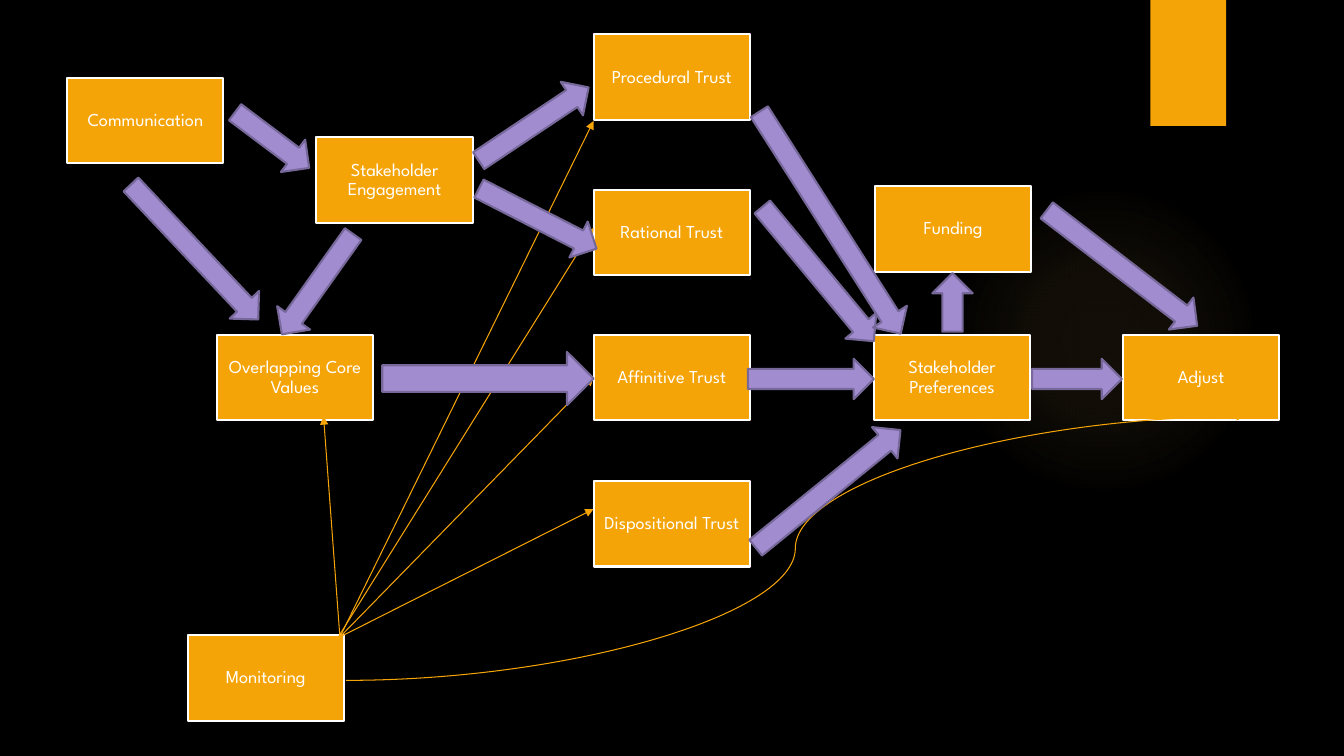
from lxml import etree
from pptx import Presentation
from pptx.dml.color import RGBColor
from pptx.enum.shapes import MSO_CONNECTOR, MSO_SHAPE
from pptx.enum.text import MSO_ANCHOR, PP_ALIGN
from pptx.oxml import parse_xml
from pptx.oxml.ns import qn
from pptx.util import Pt

RECT, OVAL, ARROW = MSO_SHAPE.RECTANGLE, MSO_SHAPE.OVAL, MSO_SHAPE.RIGHT_ARROW
LINE, CURVE = MSO_CONNECTOR.STRAIGHT, MSO_CONNECTOR.CURVE
MIDDLE, CENTER = MSO_ANCHOR.MIDDLE, PP_ALIGN.CENTER

FONT = "League Spartan"
HEX = {"back": "000000", "box": "F5A408", "text": "FFFFFF",
       "arrow": "A18CD0", "edge": "77689A", "glow": "FAC96A"}
BOX_W, BOX_H = 111.6, 61.2
TRUST_X, ROW_Y = 424, 239
THIN, THICK = 28.8, 38

BOXES = [
    ("Communication", 48, 55.5),
    ("Stakeholder Engagement", 226, 98),
    ("Overlapping Core Values", 154.8, ROW_Y),
    ("Monitoring", 134, 453.6),
    ("Procedural Trust", TRUST_X, 24.5),
    ("Rational Trust", TRUST_X, 135.5),
    ("Affinitive Trust", TRUST_X, ROW_Y),
    ("Dispositional Trust", TRUST_X, 343.5),
    ("Stakeholder Preferences", 624.2, ROW_Y),
    ("Funding", 625, 133),
    ("Adjust", 802, ROW_Y),
]

HUB = (242.8, 455)
LINKS = [
    (LINE, HUB, (TRUST_X, 86.4), None),
    (CURVE, (247, 486), (889.2, 297.4), None),
    (LINE, HUB, (TRUST_X, 363.6), None),
    (LINE, HUB, (TRUST_X, 269.6), "Affinitive Trust"),
    (LINE, (237.6, 461.5), (TRUST_X, 162.7), None),
    (LINE, HUB, (231.1, 297.4), None),
]

# centre x, centre y, length, thickness, angle
ARROWS = [
    (348.5, 270.4, 151, THICK, 0),
    (139, 180, 132.5, THIN, 46.7),
    (226.8, 203, 87.8, THIN, 125.4),
    (384.1, 156.2, 94.3, THIN, 27.1),
    (381.2, 88.6, 94.3, THIN, 326.3),
    (194.4, 100.1, 66.2, THIN, 36.9),
    (591.5, 349.2, 133.2, THIN, 320.9),
    (579.2, 270.7, 90, THIN, 0),
    (584.3, 195.8, 124.6, THIN, 50.3),
    (592.9, 159.1, 187.9, THIN, 57.5),
    (801.4, 191.5, 135.4, THIN, 37.5),
    (680.4, 216, 41.8, THIN, 270),
    (769.3, 270.7, 64.1, THIN, 0),
]
GLOW = [(0, 7), (36, 6), (69, 0)]


def color(name):
    return RGBColor.from_string(HEX[name])


def add_form(slide, kind, x, y, w, h, fill=None, line=None):
    form = slide.shapes.add_shape(kind, Pt(x), Pt(y), Pt(w), Pt(h))
    form.shadow.inherit = False
    if fill:
        form.fill.solid()
        form.fill.fore_color.rgb = color(fill)
    if line:
        form.line.color.rgb = color(line)
        form.line.width = Pt(1.5)
    else:
        form.line.fill.background()
    return form


def add_glow(slide):
    form = add_form(slide, OVAL, 677.5, 131.8, 221.8, 221.8)
    stops = "".join(
        f'<a:gs pos="{pos * 1000}"><a:srgbClr val="{HEX["glow"]}">'
        f'<a:alpha val="{alpha * 1000}"/></a:srgbClr></a:gs>'
        for pos, alpha in GLOW)
    grad = parse_xml(
        '<a:gradFill xmlns:a="http://schemas.openxmlformats.org/drawingml/2006/main">'
        f'<a:gsLst>{stops}</a:gsLst><a:path path="circle">'
        '<a:fillToRect l="50000" t="50000" r="50000" b="50000"/>'
        '</a:path></a:gradFill>')
    form._element.spPr.find(qn("a:prstGeom")).addnext(grad)


def put_text(form, text, size=13, ink="text", inset=3.6):
    frame = form.text_frame
    frame.word_wrap = True
    frame.vertical_anchor = MIDDLE
    frame.margin_left = frame.margin_right = Pt(inset)
    frame.margin_top = frame.margin_bottom = Pt(inset)
    para = frame.paragraphs[0]
    para.alignment = CENTER
    para.line_spacing = 0.9
    run = para.add_run()
    run.text = text
    run.font.name = FONT
    run.font.size = Pt(size)
    run.font.color.rgb = color(ink)


def add_link(slide, kind, start, end):
    link = slide.shapes.add_connector(kind, *map(Pt, start + end))
    link.line.color.rgb = color("box")
    link.line.width = Pt(0.75)
    etree.SubElement(link.line._get_or_add_ln(), qn("a:tailEnd"), type="triangle")
    etree.SubElement(link._element.spPr, qn("a:effectLst"))
    return link


def main():
    deck = Presentation()
    deck.slide_width, deck.slide_height = Pt(960), Pt(540)
    slide = deck.slides.add_slide(deck.slide_layouts[6])
    slide.background.fill.solid()
    slide.background.fill.fore_color.rgb = color("back")

    add_glow(slide)
    add_form(slide, RECT, 821.8, 0, 54, 90, "box")

    boxes = {}
    for text, x, y in BOXES:
        boxes[text] = add_form(slide, RECT, x, y, BOX_W, BOX_H, "box", "text")
        put_text(boxes[text], text)

    for kind, start, end, goal in LINKS:
        link = add_link(slide, kind, start, end)
        if goal:
            link.end_connect(boxes[goal], 1)

    for x, y, length, thick, angle in ARROWS:
        arrow = add_form(slide, ARROW, x - length / 2, y - thick / 2,
                         length, thick, "arrow", "edge")
        arrow.rotation = angle

    deck.save("out.pptx")


if __name__ == "__main__":
    main()
